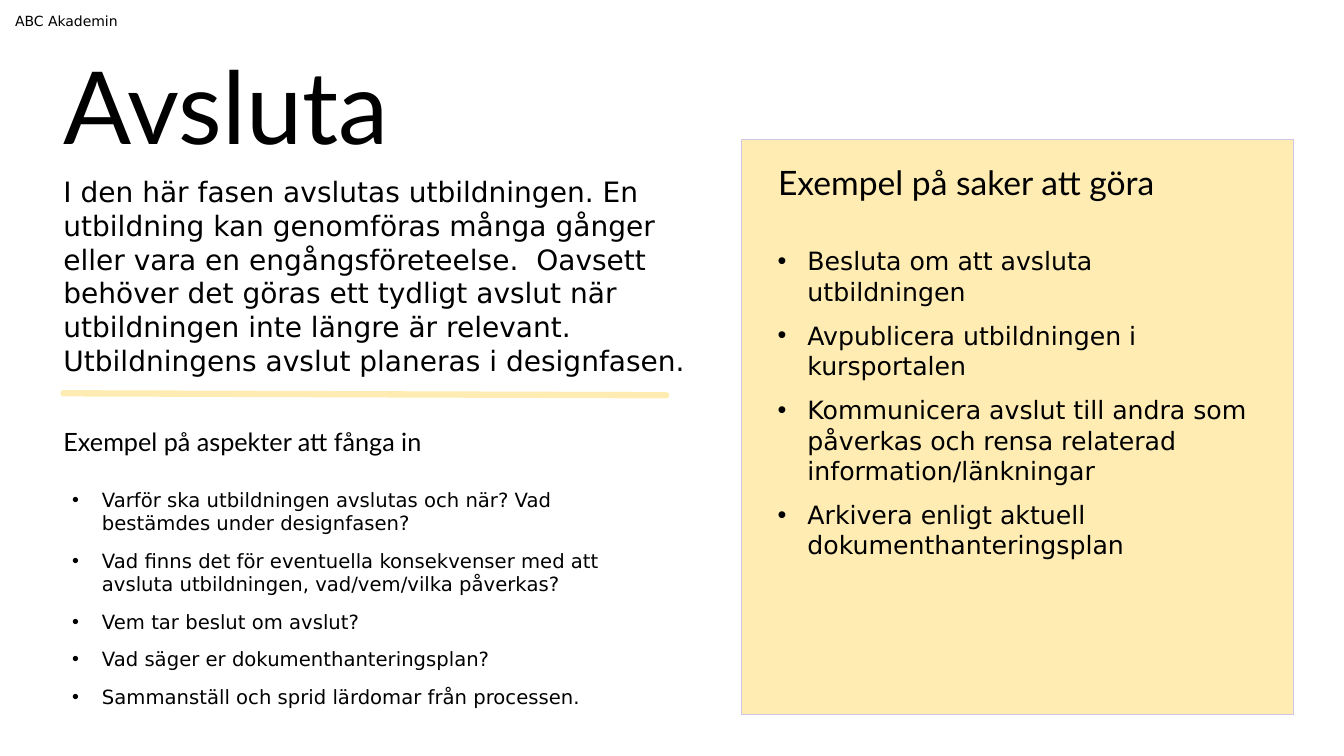
"""Builds the slide on closing a course."""
from lxml import etree
from pptx import Presentation
from pptx.dml.color import RGBColor
from pptx.enum.shapes import MSO_CONNECTOR, MSO_SHAPE
from pptx.oxml.ns import qn
from pptx.util import Cm, Pt

RECT = MSO_SHAPE.RECTANGLE
LINE = MSO_CONNECTOR.STRAIGHT
HEAD, BODY = "Lato", "DejaVu Sans"
COLORS = {"ink": "000000", "sand": "FFECB3", "edge": "D1C4E9"}
SIZE = (33.87, 19.05)
PANEL = (18.69, 3.51, 13.9, 14.5)
RULE = (1.6, 9.91, 16.79, 9.96)
INDENT, GAP = 0.75, 10

TEXTS = [
    ("Avsluta", HEAD, 72, (1.6, 1.1, 12.88, 3.07)),
    ("I den här fasen avslutas utbildningen. En utbildning kan genomföras "
     "många gånger eller vara en engångsföreteelse.  Oavsett behöver det "
     "göras ett tydligt avslut när utbildningen inte längre är relevant. "
     "Utbildningens avslut planeras i designfasen.",
     BODY, 20, (1.6, 4.41, 15.95, 5.13)),
    ("Exempel på saker att göra", HEAD, 24, (19.61, 4.07, 12.65, 1.02)),
    ("Exempel på aspekter att fånga in", HEAD, 18, (1.6, 10.74, 10.49, 0.76)),
    ("ABC Akademin", BODY, 10, (0.38, 0.32, 7.57, 0.43)),
]
LISTS = [
    (["Besluta om att avsluta utbildningen",
      "Avpublicera utbildningen i kursportalen",
      "Kommunicera avslut till andra som påverkas och rensa relaterad "
      "information/länkningar",
      "Arkivera enligt aktuell dokumenthanteringsplan"],
     18, (19.35, 6.06, 12.6, 11.35)),
    (["Varför ska utbildningen avslutas och när? Vad bestämdes under "
      "designfasen?",
      "Vad finns det för eventuella konsekvenser med att avsluta "
      "utbildningen, vad/vem/vilka påverkas?",
      "Vem tar beslut om avslut?",
      "Vad säger er dokumenthanteringsplan?",
      "Sammanställ och sprid lärdomar från processen."],
     14, (1.57, 12.16, 15.01, 5.89)),
]


def color(name):
    return RGBColor.from_string(COLORS[name])


def place(box):
    return [Cm(v) for v in box]


def add_box(slide, box, pad=(0, 0)):
    frame = slide.shapes.add_textbox(*place(box)).text_frame
    frame.word_wrap = True
    frame.margin_left = frame.margin_right = Cm(pad[0])
    frame.margin_top = frame.margin_bottom = Cm(pad[1])
    return frame


def add_run(para, text, font, size):
    run = para.add_run()
    run.text = text
    run.font.name = font
    run.font.size = Pt(size)
    run.font.color.rgb = color("ink")


def add_list(slide, items, size, box):
    frame = add_box(slide, box, (0.25, 0.13))
    for i, item in enumerate(items):
        para = frame.add_paragraph() if i else frame.paragraphs[0]
        if i:
            para.space_before = Pt(GAP)
        props = para._p.get_or_add_pPr()
        props.set("marL", str(Cm(INDENT)))
        props.set("indent", str(-Cm(INDENT)))
        etree.SubElement(props, qn("a:buFont")).set("typeface", "Arial")
        etree.SubElement(props, qn("a:buChar")).set("char", "•")
        add_run(para, item, BODY, size)


def add_panel(slide):
    panel = slide.shapes.add_shape(RECT, *place(PANEL))
    panel.shadow.inherit = False
    panel.fill.solid()
    panel.fill.fore_color.rgb = color("sand")
    panel.line.color.rgb = color("edge")
    panel.line.width = Pt(0.5)


def add_rule(slide):
    rule = slide.shapes.add_connector(LINE, *place(RULE))
    rule.line.color.rgb = color("sand")
    rule.line.width = Pt(4.5)
    rule.line._get_or_add_ln().set("cap", "rnd")
    etree.SubElement(rule._element.spPr, qn("a:effectLst"))


def main():
    deck = Presentation()
    deck.slide_width, deck.slide_height = place(SIZE)
    slide = deck.slides.add_slide(deck.slide_layouts[6])
    add_panel(slide)
    for text, font, size, box in TEXTS:
        add_run(add_box(slide, box).paragraphs[0], text, font, size)
    for items, size, box in LISTS:
        add_list(slide, items, size, box)
    add_rule(slide)
    deck.save("out.pptx")


if __name__ == "__main__":
    main()
